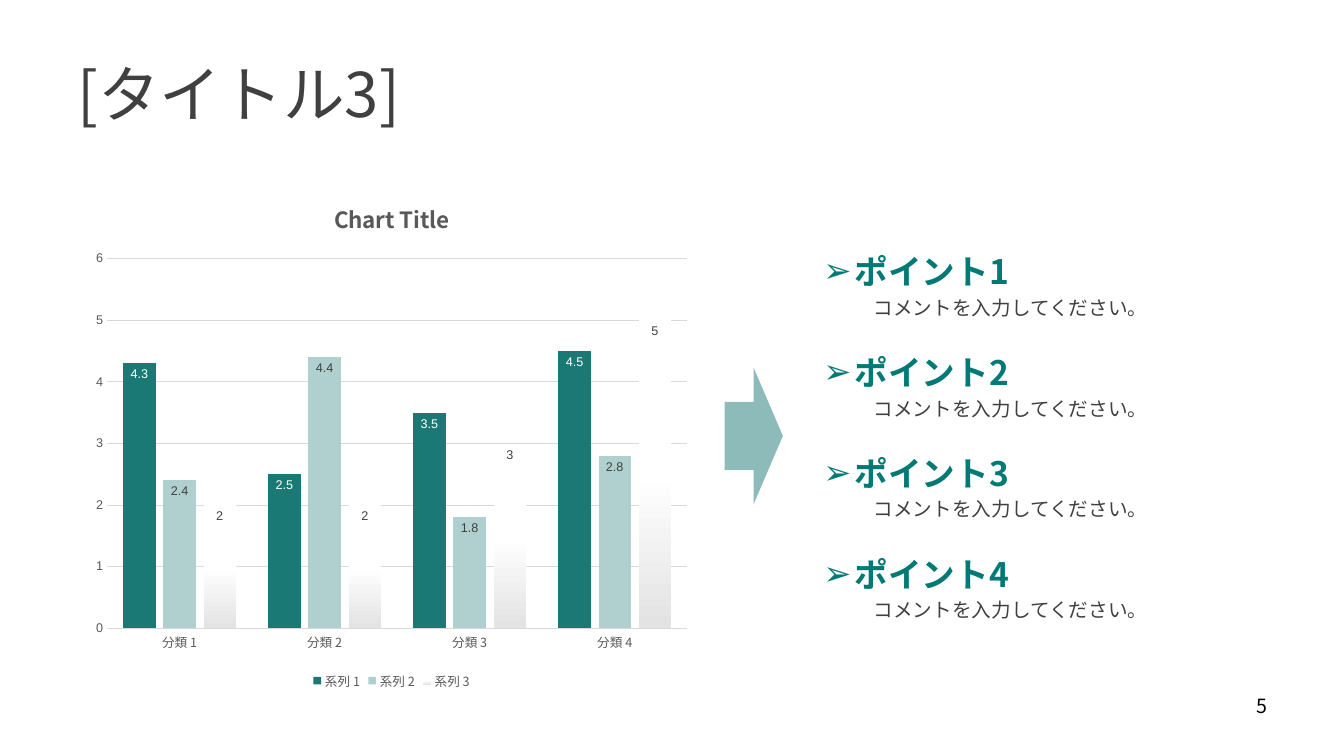
from dataclasses import dataclass

from lxml.etree import SubElement
from pptx import Presentation
from pptx.chart.data import CategoryChartData
from pptx.dml.color import RGBColor
from pptx.enum.chart import XL_CHART_TYPE, XL_LABEL_POSITION, XL_LEGEND_POSITION, XL_TICK_MARK
from pptx.enum.shapes import MSO_SHAPE
from pptx.enum.text import MSO_ANCHOR, PP_ALIGN
from pptx.oxml.ns import qn
from pptx.util import Cm, Pt


@dataclass(frozen=True)
class Theme:
    """Colours, fonts and type sizes of the slide."""
    face: str = "Noto Sans CJK JP"
    plain: str = "Arial"
    teal: str = "1A7975"
    pale: str = "AFD0CF"
    white: str = "FFFFFF"
    smoke: str = "E3E3E3"
    point: str = "017975"
    ink: str = "404040"
    muted: str = "595959"
    grid: str = "D9D9D9"
    black: str = "000000"
    title: int = 44
    head: int = 24
    chart: int = 16
    body: int = 14
    label: int = 9


THEME = Theme()


def rgb(code):
    """Turn a hex code into a colour."""
    return RGBColor.from_string(code)


def style(font, size, color, bold=False, face=THEME.face):
    """Set the look of a font for Latin and Japanese text."""
    font.size, font.bold, font.name = Pt(size), bold, face
    font.color.rgb = rgb(color)
    SubElement(font._element, qn("a:ea"), typeface=face)


def indent(para, left, first=0):
    """Set the left margin and first-line indent of a paragraph."""
    props = para._p.get_or_add_pPr()
    props.set("marL", str(Cm(left)))
    props.set("indent", str(Cm(first)))
    return props


def bullet(para, mark):
    """Give a paragraph a hanging bullet."""
    props = indent(para, 0.79, -0.79)
    font = SubElement(props, qn("a:buFont"), typeface=THEME.plain)
    char = SubElement(props, qn("a:buChar"), char=mark)
    props.find(qn("a:defRPr")).addprevious(font)
    font.addnext(char)


def add_title(slide, text):
    """Place and fill the title."""
    title = slide.shapes.title
    title.left, title.top, title.width, title.height = Cm(1.7), Cm(0.76), Cm(30.48), Cm(3.18)
    title.text_frame.vertical_anchor = MSO_ANCHOR.MIDDLE
    para = title.text_frame.paragraphs[0]
    para.text, para.alignment = text, PP_ALIGN.LEFT
    style(para.font, THEME.title, THEME.ink)


def add_box(slide, left, top, width, height):
    """Add a wrapping text box and return its frame."""
    frame = slide.shapes.add_textbox(Cm(left), Cm(top), Cm(width), Cm(height)).text_frame
    frame.word_wrap = True
    return frame


def add_points(slide, count):
    """List the numbered points, each with its comment."""
    frame = add_box(slide, 20.5, 6.12, 12.78, 9.75)
    for num in range(1, count + 1):
        head = frame.paragraphs[0] if num == 1 else frame.add_paragraph()
        head.text, head.line_spacing = f"ポイント{num}", Pt(31)
        style(head.font, THEME.head, THEME.point, bold=True)
        bullet(head, "➢")
        note = frame.add_paragraph()
        note.text, note.line_spacing = "コメントを入力してください。", Pt(20)
        note.space_after = Pt(21)
        style(note.font, THEME.body, THEME.ink)
        indent(note, 1.27)


def add_arrow(slide):
    """Add the half-clear arrow from chart to points."""
    arrow = slide.shapes.add_shape(
        MSO_SHAPE.RIGHT_ARROW, Cm(18.26), Cm(9.27), Cm(1.47), Cm(3.43))
    arrow.shadow.inherit = False
    arrow.line.fill.background()
    arrow.fill.solid()
    arrow.fill.fore_color.rgb = rgb(THEME.teal)
    color = arrow._element.spPr.find(f".//{qn('a:srgbClr')}")
    SubElement(color, qn("a:alpha"), val="50000")


def paint(fill, color, end=None):
    """Fill with one colour, or fade the lower half to a second one."""
    if end is None:
        fill.solid()
        fill.fore_color.rgb = rgb(color)
        return
    fill.gradient()
    fill.gradient_angle = 270
    for stop, place, tone in zip(fill.gradient_stops, (0.5, 1), (color, end)):
        stop.position, stop.color.rgb = place, rgb(tone)


def style_axes(chart):
    """Format both axes and the grid."""
    cat, val = chart.category_axis, chart.value_axis
    for axis, face in ((cat, THEME.face), (val, THEME.plain)):
        axis.major_tick_mark = axis.minor_tick_mark = XL_TICK_MARK.NONE
        style(axis.tick_labels.font, THEME.label, THEME.muted, face=face)
    cat.format.line.color.rgb = rgb(THEME.grid)
    cat.format.line.width = Pt(1)
    val.format.line.fill.background()
    val.minimum_scale, val.maximum_scale, val.major_unit = 0, 6, 1
    grid = val.major_gridlines.format.line
    grid.color.rgb, grid.width = rgb(THEME.grid), Pt(0.75)


def add_chart(slide):
    """Add the column chart."""
    data = CategoryChartData()
    data.categories = [f"分類 {num}" for num in range(1, 5)]
    rows = ((4.3, 2.5, 3.5, 4.5), (2.4, 4.4, 1.8, 2.8), (2, 2, 3, 5))
    for num, row in enumerate(rows, 1):
        data.add_series(f"系列 {num}", row)
    chart = slide.shapes.add_chart(
        XL_CHART_TYPE.COLUMN_CLUSTERED, Cm(2.11), Cm(4.55), Cm(15.52), Cm(12.93), data).chart
    style(chart.font, 10, THEME.black, face=THEME.plain)
    chart.has_title = True
    head = chart.chart_title.text_frame.paragraphs[0]
    run = head.add_run()
    run.text = "Chart Title"
    style(run.font, THEME.chart, THEME.muted, bold=True)
    chart.chart_title.include_in_layout = False
    chart.has_legend = True
    chart.legend.position = XL_LEGEND_POSITION.BOTTOM
    chart.legend.include_in_layout = False
    style(chart.legend.font, THEME.label, THEME.muted)
    style_axes(chart)
    plot = chart.plots[0]
    plot.gap_width, plot.overlap, plot.vary_by_categories = 100, -24, False
    fills = ((THEME.teal,), (THEME.pale,), (THEME.white, THEME.smoke))
    inks = (THEME.white, THEME.ink, THEME.ink)
    for series, tones, ink in zip(plot.series, fills, inks):
        paint(series.format.fill, *tones)
        labels = series.data_labels
        labels.show_value, labels.position = True, XL_LABEL_POSITION.INSIDE_END
        style(labels.font, THEME.label, ink, face=THEME.plain)


def add_number(slide, text):
    """Add the page number."""
    para = add_box(slide, 24.28, 17.35, 7.9, 1.32).paragraphs[0]
    para.text, para.alignment = text, PP_ALIGN.RIGHT
    style(para.font, THEME.body, THEME.black)


def main():
    """Build and save the slide."""
    deck = Presentation()
    deck.slide_width, deck.slide_height = Cm(33.87), Cm(19.05)
    slide = deck.slides.add_slide(deck.slide_layouts[5])
    add_title(slide, "[タイトル3]")
    add_chart(slide)
    add_arrow(slide)
    add_points(slide, 4)
    add_number(slide, "5")
    deck.save("out.pptx")


if __name__ == "__main__":
    main()
